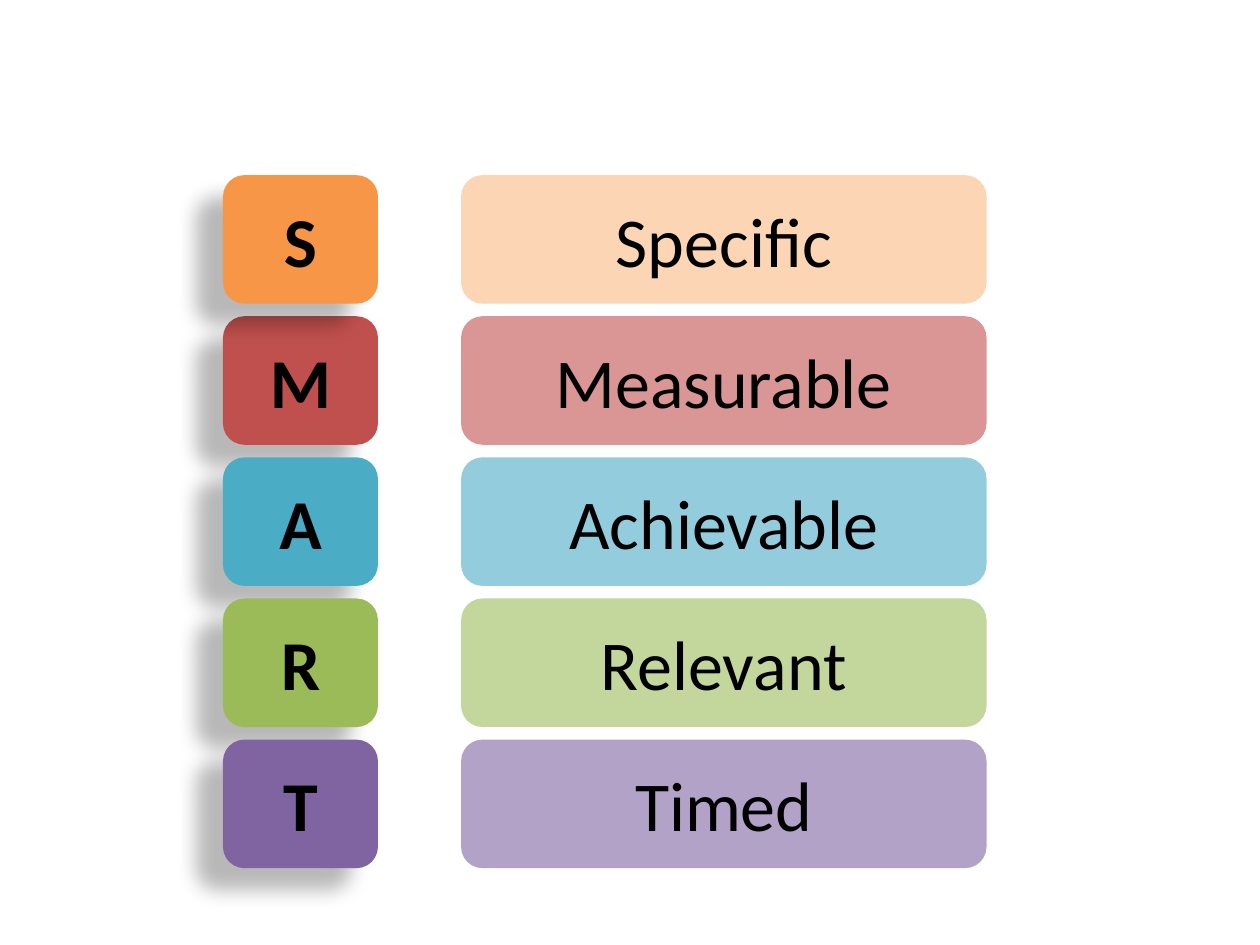
from lxml import etree
from pptx import Presentation
from pptx.dml.color import RGBColor
from pptx.enum.shapes import MSO_SHAPE
from pptx.enum.text import MSO_ANCHOR, PP_ALIGN
from pptx.oxml.ns import qn
from pptx.util import Inches, Pt

ROUNDED = MSO_SHAPE.ROUNDED_RECTANGLE
MIDDLE = MSO_ANCHOR.MIDDLE
CENTER = PP_ALIGN.CENTER

COLORS = {
    "text": "000000",
    "shadow": "000000",
    "orange": "F79646", "light orange": "FCD5B5",
    "red": "C0504D", "light red": "D99694",
    "aqua": "4BACC6", "light aqua": "93CDDD",
    "green": "9BBB59", "light green": "C3D69B",
    "purple": "8064A2", "light purple": "B3A2C7",
}
GOALS = [
    ("Specific", "orange"),
    ("Measurable", "red"),
    ("Achievable", "aqua"),
    ("Relevant", "green"),
    ("Timed", "purple"),
]
FIRST_TOP, ROW_STEP, ROW_HEIGHT = 1.39, 1.12, 1.02
LETTER_LEFT, LETTER_WIDTH = 1.77, 1.23
WORD_LEFT, WORD_WIDTH = 3.66, 4.17


def write_text(shape, text, size=40, font="Calibri", bold=False, color="text"):
    frame = shape.text_frame
    frame.word_wrap = True
    frame.vertical_anchor = MIDDLE
    paragraph = frame.paragraphs[0]
    paragraph.alignment = CENTER
    run = paragraph.add_run()
    run.text = text
    run.font.name = font
    run.font.size = Pt(size)
    run.font.bold = bold
    run.font.color.rgb = RGBColor.from_string(COLORS[color])


def add_tile(slide, left, top, width, fill):
    shape = slide.shapes.add_shape(
        ROUNDED, Inches(left), Inches(top), Inches(width), Inches(ROW_HEIGHT))
    shape.shadow.inherit = False
    shape.fill.solid()
    shape.fill.fore_color.rgb = RGBColor.from_string(COLORS[fill])
    shape.line.fill.background()
    return shape


def add_shadow(shape, blur=11.8, distance=19.7, angle=141, opacity=28):
    effects = shape._element.spPr.find(qn("a:effectLst"))
    shadow = etree.SubElement(
        effects, qn("a:outerShdw"), blurRad=str(Pt(blur)), dist=str(Pt(distance)),
        dir=str(angle * 60000), algn="ctr", rotWithShape="0")
    color = etree.SubElement(shadow, qn("a:srgbClr"), val=COLORS["shadow"])
    etree.SubElement(color, qn("a:alpha"), val=str(opacity * 1000))


def main():
    presentation = Presentation()
    presentation.slide_width = Inches(10)
    presentation.slide_height = Inches(7.5)
    slide = presentation.slides.add_slide(presentation.slide_layouts[6])

    rows = list(enumerate(GOALS))
    first_row_on_top = rows[1:] + rows[:1]
    for index, (word, color) in first_row_on_top:
        top = FIRST_TOP + index * ROW_STEP
        letter_tile = add_tile(slide, LETTER_LEFT, top, LETTER_WIDTH, color)
        add_shadow(letter_tile)
        write_text(letter_tile, word[0], bold=True)
        word_tile = add_tile(slide, WORD_LEFT, top, WORD_WIDTH, "light " + color)
        write_text(word_tile, word)

    presentation.save("out.pptx")


if __name__ == "__main__":
    main()
